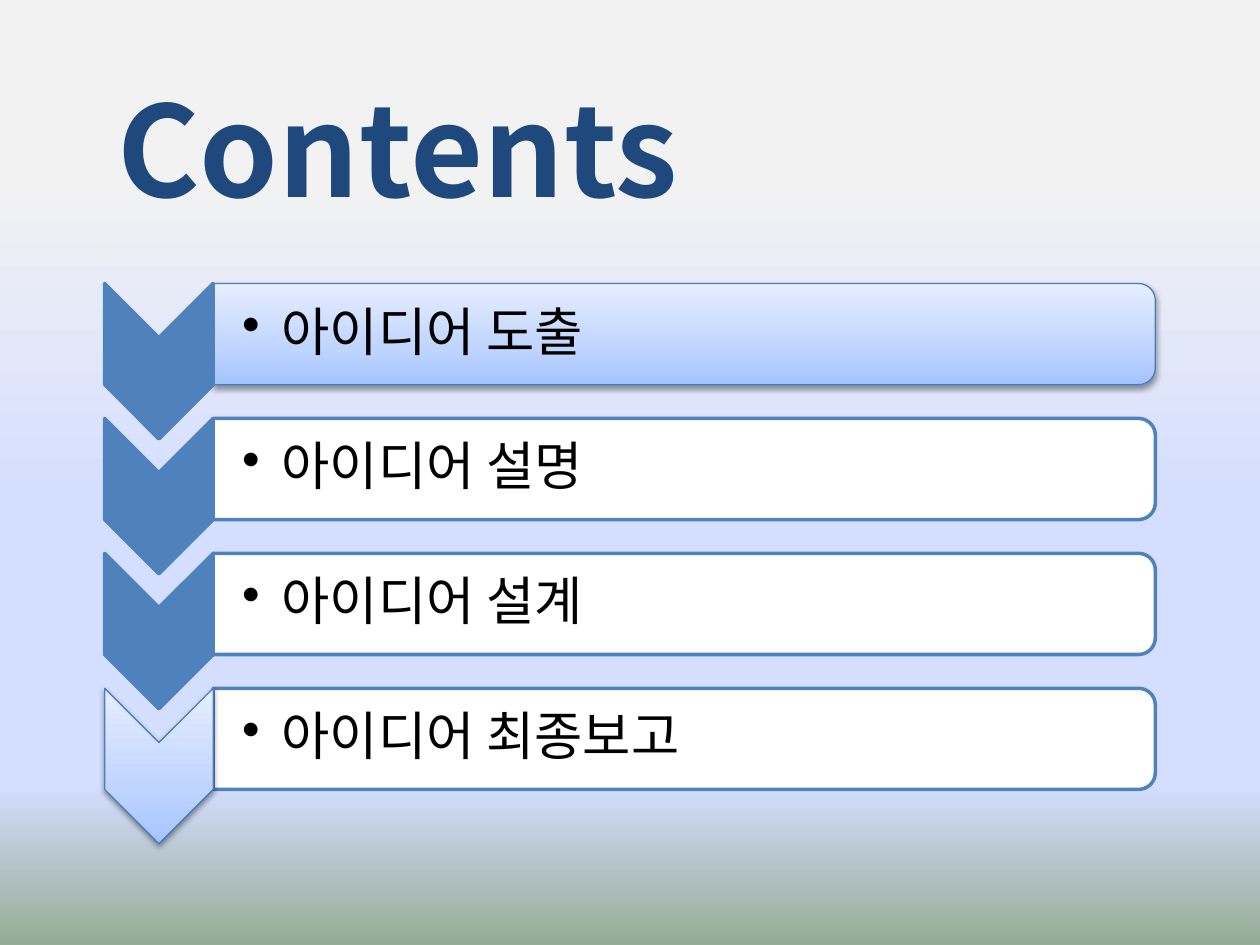
from math import cos, radians, sin
from typing import NamedTuple

from lxml.etree import SubElement
from pptx import Presentation
from pptx.dml.color import RGBColor
from pptx.enum.text import MSO_ANCHOR, MSO_AUTO_SIZE, PP_ALIGN
from pptx.oxml.ns import qn
from pptx.util import Pt

FONT = "Noto Sans CJK KR"
BLUE = "4F81BD"
SKY = [(0, "F2F2F2"), (19, "F2F2F2"), (53, "D4DEFF"), (83, "D4DEFF"), (100, "96AB94")]
GLOW = [(0, "A4C4FF"), (35, "BFD4FF"), (100, "E6EEFF")]

LEFT, TOP, PITCH = 59.8, 162, 77.1
ARROW_WIDTH, ARROW_DEPTH = 62, 31
BAR_WIDTH, BAR_HEIGHT, RADIUS = 538.4, 57.8, 9.6


class Step(NamedTuple):
    label: str
    arrow_glows: bool = False
    bar_glows: bool = False


STEPS = [
    Step("아이디어 도출", bar_glows=True),
    Step("아이디어 설명"),
    Step("아이디어 설계"),
    Step("아이디어 최종보고", arrow_glows=True),
]


def color(value: str) -> RGBColor:
    return RGBColor.from_string(value)


def fill_gradient(fill, owner, stops, angle: float) -> None:
    """Fill with any number of stops; owner is the XML element holding the fill."""
    fill.gradient()
    fill.gradient_angle = angle
    stop_list = owner.find(".//" + qn("a:gsLst"))
    for old in list(stop_list):
        stop_list.remove(old)
    for position, value in stops:
        stop = SubElement(stop_list, qn("a:gs"), pos=str(position * 1000))
        SubElement(stop, qn("a:srgbClr"), val=value)


def add_shadow(shape) -> None:
    effects = shape._element.spPr.find(qn("a:effectLst"))
    shadow = SubElement(effects, qn("a:outerShdw"), blurRad=str(Pt(3.1)),
                        dist=str(Pt(1.6)), dir="5400000", rotWithShape="0")
    black = SubElement(shadow, qn("a:srgbClr"), val="000000")
    SubElement(black, qn("a:alpha"), val="38000")


def add_outline(slide, points, glows: bool, plain_fill: str):
    corners = [(Pt(x), Pt(y)) for x, y in points]
    builder = slide.shapes.build_freeform(*corners[0])
    builder.add_line_segments(corners[1:], close=True)
    shape = builder.convert_to_shape()
    shape.shadow.inherit = False
    if glows:
        fill_gradient(shape.fill, shape._element.spPr, GLOW, 90)
        add_shadow(shape)
    else:
        shape.fill.solid()
        shape.fill.fore_color.rgb = color(plain_fill)
    shape.line.color.rgb = color("4B7EBC" if glows else BLUE)
    shape.line.width = Pt(0.75 if glows else 2)
    return shape


def add_arrow(slide, top: float, glows: bool) -> None:
    middle, right = LEFT + ARROW_DEPTH, LEFT + ARROW_WIDTH
    shoulder = top + BAR_HEIGHT
    add_outline(slide, [
        (right, top), (right, shoulder), (middle, shoulder + ARROW_DEPTH),
        (LEFT, shoulder), (LEFT, top), (middle, top + ARROW_DEPTH),
    ], glows, BLUE)


def add_bar(slide, top: float, label: str, glows: bool) -> None:
    """Draw a bar with its right corners rounded and a bulleted label."""
    left = LEFT + ARROW_WIDTH
    right, bottom = left + BAR_WIDTH, top + BAR_HEIGHT

    def corner(center_y: float, start: int):
        return [(right - RADIUS + RADIUS * cos(radians(a)),
                 center_y + RADIUS * sin(radians(a)))
                for a in range(start, start + 91, 10)]

    bar = add_outline(slide, [
        (left, top), *corner(top + RADIUS, -90),
        *corner(bottom - RADIUS, 0), (left, bottom),
    ], glows, "FFFFFF")
    frame = bar.text_frame
    frame.text = label
    frame.word_wrap = True
    frame.vertical_anchor = MSO_ANCHOR.MIDDLE
    frame.margin_left = Pt(16.6)
    frame.margin_top = frame.margin_right = frame.margin_bottom = Pt(4.3)
    paragraph = frame.paragraphs[0]
    paragraph.alignment = PP_ALIGN.LEFT
    paragraph.line_spacing = 0.9
    properties = paragraph._p.get_or_add_pPr()
    properties.set("marL", str(Pt(22.5)))
    properties.set("indent", str(Pt(-22.5)))
    SubElement(properties, qn("a:buChar"), char="•")
    style_run(paragraph.runs[0], 30, "000000")


def style_run(run, size: float, value: str, bold: bool = False) -> None:
    run.font.size = Pt(size)
    run.font.bold = bold
    run.font.color.rgb = color(value)
    run.font.name = FONT
    SubElement(run._r.rPr, qn("a:ea"), typeface=FONT)


def add_title(slide, text: str) -> None:
    title = slide.shapes.title
    title.left, title.top, title.width, title.height = map(Pt, (59.8, 37.4, 521.3, 143.3))
    frame = title.text_frame
    frame.text = text
    frame.word_wrap = True
    frame.auto_size = MSO_AUTO_SIZE.NONE
    frame.vertical_anchor = MSO_ANCHOR.TOP
    frame.paragraphs[0].alignment = PP_ALIGN.LEFT
    style_run(frame.paragraphs[0].runs[0], 72, "1F497D", bold=True)


def main() -> None:
    deck = Presentation()
    deck.slide_width, deck.slide_height = Pt(720), Pt(540)
    slide = deck.slides.add_slide(deck.slide_layouts[5])
    fill_gradient(slide.background.fill, slide._element, SKY, 270)
    for row, step in enumerate(STEPS):
        top = TOP + row * PITCH
        add_bar(slide, top, step.label, step.bar_glows)
        add_arrow(slide, top, step.arrow_glows)
    add_title(slide, "Contents")
    deck.save("out.pptx")


if __name__ == "__main__":
    main()
